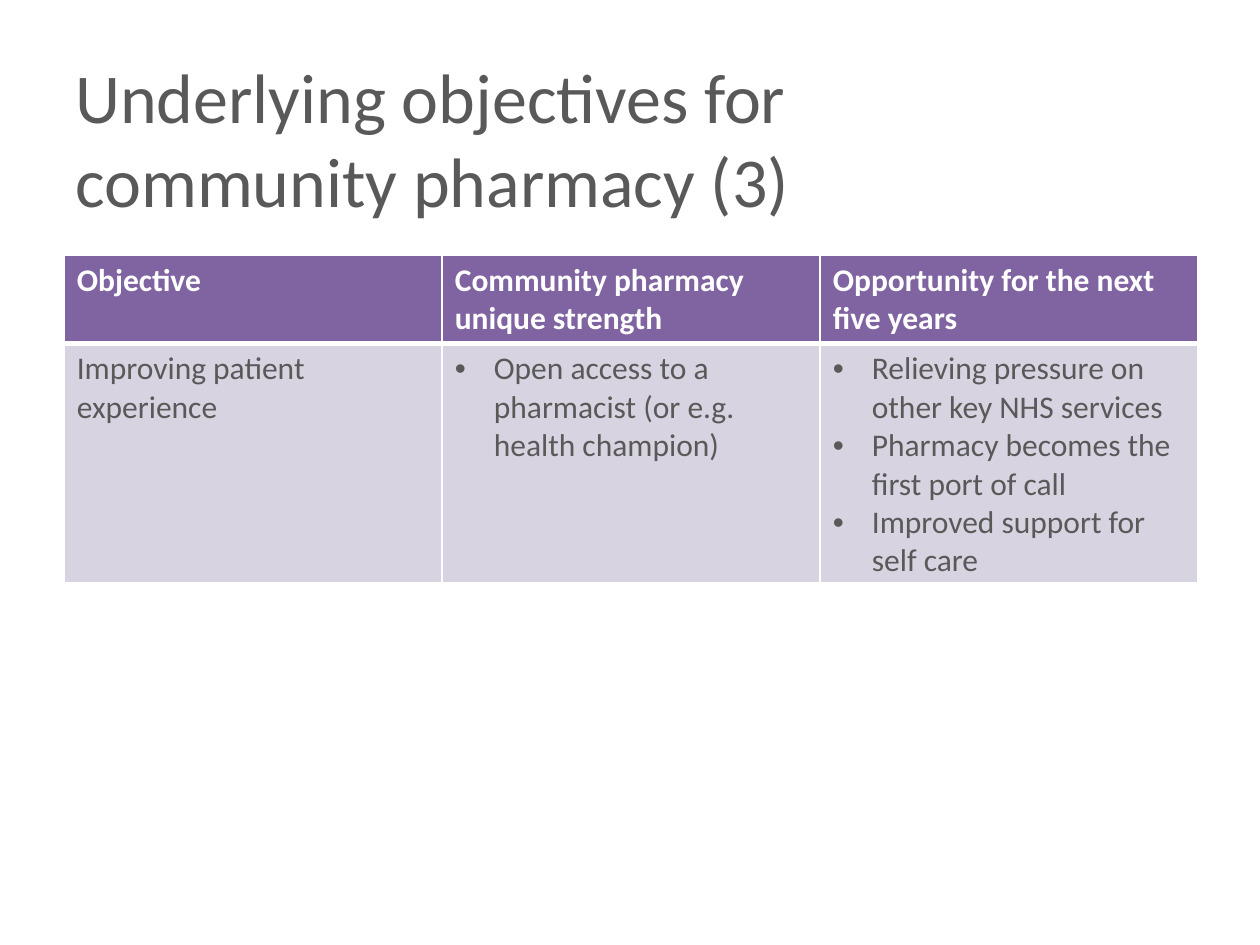
"""Build a slide with a title and a table of objectives for community pharmacy."""
import pptx
import pptx.util
import pptx.dml.color
import pptx.enum.text
import pptx.oxml
import lxml.etree

COLOURS = {"text": "595959", "header": "8064A2", "body": "D8D3E0", "white": "FFFFFF"}
FONT = "Calibri"
NAMESPACE = "http://schemas.openxmlformats.org/drawingml/2006/main"
HEADINGS = [
    "Objective",
    "Community pharmacy unique strength",
    "Opportunity for the next five years",
]
OBJECTIVE = [
    ["Improving patient experience"],
    ["Open access to a pharmacist (or e.g. health champion)"],
    [
        "Relieving pressure on other key NHS services",
        "Pharmacy becomes the first port of call",
        "Improved support for self care",
    ],
]
ROWS = [[[heading] for heading in HEADINGS], OBJECTIVE]


def style_font(para, size, colour, bold=False):
    para.font.name = FONT
    para.font.size = pptx.util.Pt(size)
    para.font.bold = bold
    para.font.color.rgb = pptx.dml.color.RGBColor.from_string(COLOURS[colour])


def add_border(cell, side, points):
    line = pptx.oxml.parse_xml(
        f'<a:ln{side} xmlns:a="{NAMESPACE}" w="{pptx.util.Pt(points)}"><a:solidFill>'
        f'<a:srgbClr val="{COLOURS["white"]}"/></a:solidFill></a:ln{side}>'
    )
    cell._tc.get_or_add_tcPr().append(line)


deck = pptx.Presentation()
deck.slide_width = pptx.util.Inches(10)
deck.slide_height = pptx.util.Inches(7.5)
page = deck.slides.add_slide(deck.slide_layouts[6])
width, height = deck.slide_width, deck.slide_height

title_box = page.shapes.add_textbox(
    int(width * 0.05), int(height * 0.04), int(width * 0.64), int(height * 0.21)
)
title_frame = title_box.text_frame
title_frame.word_wrap = True
title_frame.vertical_anchor = pptx.enum.text.MSO_ANCHOR.MIDDLE
title = title_frame.paragraphs[0]
title.text = "Underlying objectives for community pharmacy (3)"
style_font(title, 40, "text")

row_heights = [pptx.util.Inches(0.7), pptx.util.Inches(1.9)]
table = page.shapes.add_table(
    len(ROWS), len(HEADINGS), pptx.util.Inches(0.51), int(height * 0.27),
    int(width * 0.9), sum(row_heights)
).table

for row_index, texts in enumerate(ROWS):
    table.rows[row_index].height = row_heights[row_index]
    is_header = row_index == 0
    for column_index, lines in enumerate(texts):
        cell = table.cell(row_index, column_index)
        for side in "LRTB":
            between_rows = side == ("B" if is_header else "T")
            add_border(cell, side, 3 if between_rows else 1)
        cell.fill.solid()
        fill = COLOURS["header" if is_header else "body"]
        cell.fill.fore_color.rgb = pptx.dml.color.RGBColor.from_string(fill)
        for line_index, text in enumerate(lines):
            frame = cell.text_frame
            para = frame.add_paragraph() if line_index else frame.paragraphs[0]
            para.text = text
            if not is_header and column_index > 0:
                properties = para._p.get_or_add_pPr()
                indent = pptx.util.Inches(0.31)
                properties.set("marL", str(indent))
                properties.set("indent", str(-indent))
                bullet_font = lxml.etree.SubElement(properties, f"{{{NAMESPACE}}}buFont")
                bullet_font.set("typeface", "Arial")
                bullet = lxml.etree.SubElement(properties, f"{{{NAMESPACE}}}buChar")
                bullet.set("char", "•")
            style_font(para, 18, "white" if is_header else "text", is_header)

deck.save("out.pptx")
